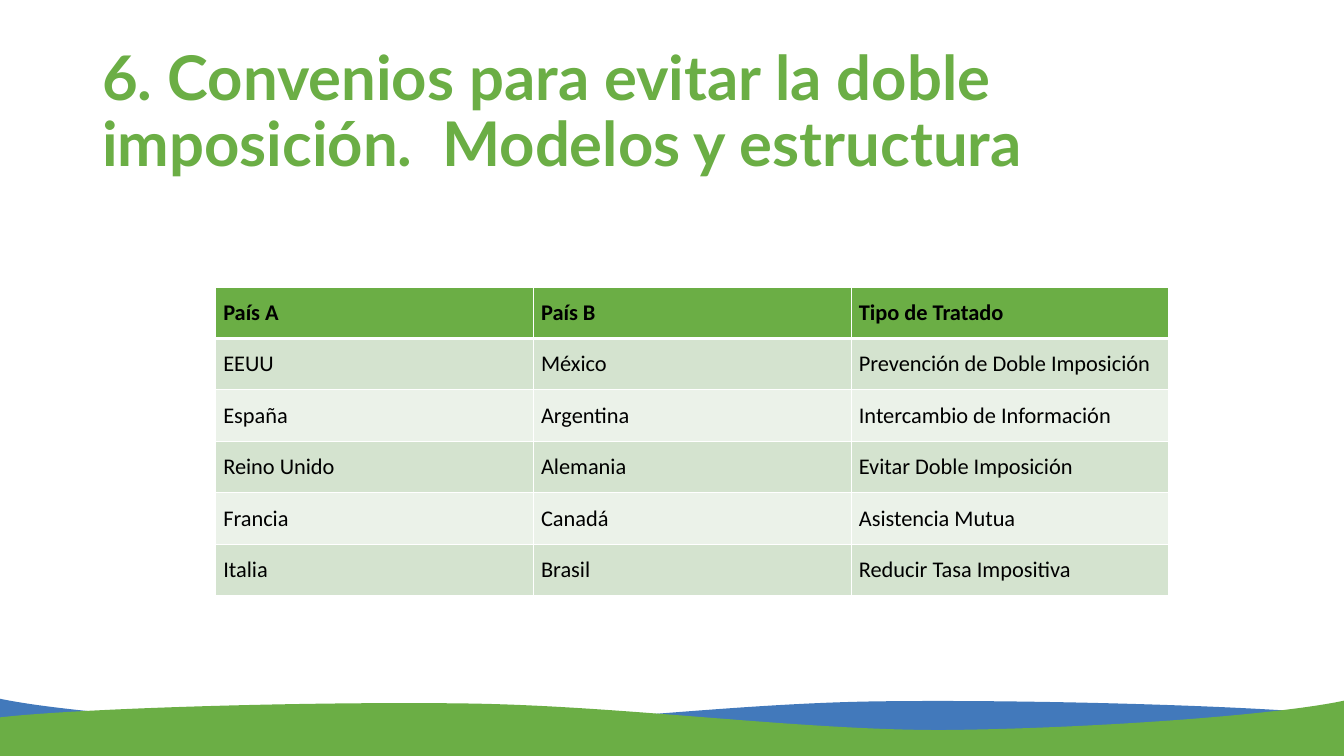
from dataclasses import dataclass

import lxml.etree
import pptx
import pptx.dml.color
import pptx.enum.text
import pptx.oxml
import pptx.oxml.ns
import pptx.util

PX = 6350  # EMU in one px, 144 px to the inch
SLIDE_W, SLIDE_H = 1920, 1080


@dataclass(frozen=True)
class Theme:
    green: str = "6BAE45"
    blue: str = "4279BB"
    band_dark: str = "D4E3CF"
    band_light: str = "EBF2E9"
    text: str = "000000"
    border: str = "FFFFFF"
    title_font: str = "Lato"
    body_font: str = "Calibri"
    title_size: int = 44
    body_size: int = 16


THEME = Theme()

TITLE = "6. Convenios para evitar la doble imposición.  Modelos y estructura"
TREATIES = [
    ("País A", "País B", "Tipo de Tratado"),
    ("EEUU", "México", "Prevención de Doble Imposición"),
    ("España", "Argentina", "Intercambio de Información"),
    ("Reino Unido", "Alemania", "Evitar Doble Imposición"),
    ("Francia", "Canadá", "Asistencia Mutua"),
    ("Italia", "Brasil", "Reducir Tasa Impositiva"),
]

# Crest of a wave, left to right: a start, then three points for each curve.
CREST = [
    (-1, 1025),
    (109, 1012), (441, 1002), (665, 1005),
    (890, 1008), (1136, 1043), (1346, 1043),
    (1555, 1041), (1822, 1022), (1920, 1001),
]
WAVE_BOTTOM = 1083


def emu(px):
    return pptx.util.Emu(round(px * PX))


def rgb(color):
    return pptx.dml.color.RGBColor.from_string(color)


def format_text(p, font, size, color, bold):
    for r in p.runs:
        r.font.name = font
        r.font.size = pptx.util.Pt(size)
        r.font.color.rgb = rgb(color)
        r.font.bold = bold


def curve_lines(s, count):
    """Turn the first count lines of an outline, three by three, into curves."""
    qn = pptx.oxml.ns.qn
    lines = list(s._element.iter(qn("a:lnTo")))[:count]
    for i in range(0, count, 3):
        curve = lxml.etree.Element(qn("a:cubicBezTo"))
        lines[i].addprevious(curve)
        for line in lines[i:i + 3]:
            curve.append(line[0])
            line.getparent().remove(line)


def add_wave(slide, color, mirrored=False, rise=0):
    """Fill the area under the crest, optionally flipped left to right."""
    points = CREST + [(CREST[-1][0], WAVE_BOTTOM), (CREST[0][0], WAVE_BOTTOM)]
    outline = [(emu(SLIDE_W - 1 - x if mirrored else x), emu(y - rise))
               for x, y in points]
    builder = slide.shapes.build_freeform(*outline[0], scale=1.0)
    builder.add_line_segments(outline[1:], close=True)
    s = builder.convert_to_shape()
    curve_lines(s, len(CREST) - 1)
    s.shadow.inherit = False
    s.fill.solid()
    s.fill.fore_color.rgb = rgb(color)
    s.line.fill.background()


def add_title(slide, text, left, top, width, height):
    s = slide.shapes.add_textbox(emu(left), emu(top), emu(width), emu(height))
    tf = s.text_frame
    tf.word_wrap = True
    tf.vertical_anchor = pptx.enum.text.MSO_ANCHOR.MIDDLE
    tf.text = text
    p = tf.paragraphs[0]
    p.line_spacing = 0.9
    format_text(p, THEME.title_font, THEME.title_size, THEME.green, True)


def set_borders(cell, top, bottom):
    """Draw the cell's four borders; top and bottom are widths in points."""
    tc_pr = cell._tc.get_or_add_tcPr()
    for side, width in (("L", 1), ("R", 1), ("T", top), ("B", bottom)):
        tc_pr.append(pptx.oxml.parse_xml(
            f'<a:ln{side} {pptx.oxml.ns.nsdecls("a")} w="{pptx.util.Pt(width)}">'
            f'<a:solidFill><a:srgbClr val="{THEME.border}"/></a:solidFill>'
            f'</a:ln{side}>'))


def format_cell(cell, text, row):
    header = row == 0
    set_borders(cell, top=3 if row == 1 else 1, bottom=3 if header else 1)
    band = THEME.band_dark if row % 2 else THEME.band_light
    cell.fill.solid()
    cell.fill.fore_color.rgb = rgb(THEME.green if header else band)
    cell.vertical_anchor = pptx.enum.text.MSO_ANCHOR.MIDDLE
    cell.margin_left = cell.margin_right = emu(11)
    cell.margin_top = cell.margin_bottom = emu(11)
    cell.text_frame.text = text
    format_text(cell.text_frame.paragraphs[0], THEME.body_font,
                THEME.body_size, THEME.text, header)


def add_treaty_table(slide, rows, left, top, width, height):
    n_rows, n_cols = len(rows), len(rows[0])
    table = slide.shapes.add_table(
        n_rows, n_cols, emu(left), emu(top), emu(width), emu(height)).table
    for column in table.columns:
        column.width = emu(width / n_cols)
    for i, texts in enumerate(rows):
        table.rows[i].height = emu(height / n_rows)
        for j, text in enumerate(texts):
            format_cell(table.cell(i, j), text, i)


def main():
    prs = pptx.Presentation()
    prs.slide_width, prs.slide_height = emu(SLIDE_W), emu(SLIDE_H)
    slide = prs.slides.add_slide(prs.slide_layouts[6])
    add_wave(slide, THEME.blue, mirrored=True, rise=3)
    add_wave(slide, THEME.green)
    add_title(slide, TITLE, 132, 58, 1656, 209)
    add_treaty_table(slide, TREATIES, 308, 410, 1362, 441)
    prs.save("out.pptx")


if __name__ == "__main__":
    main()
